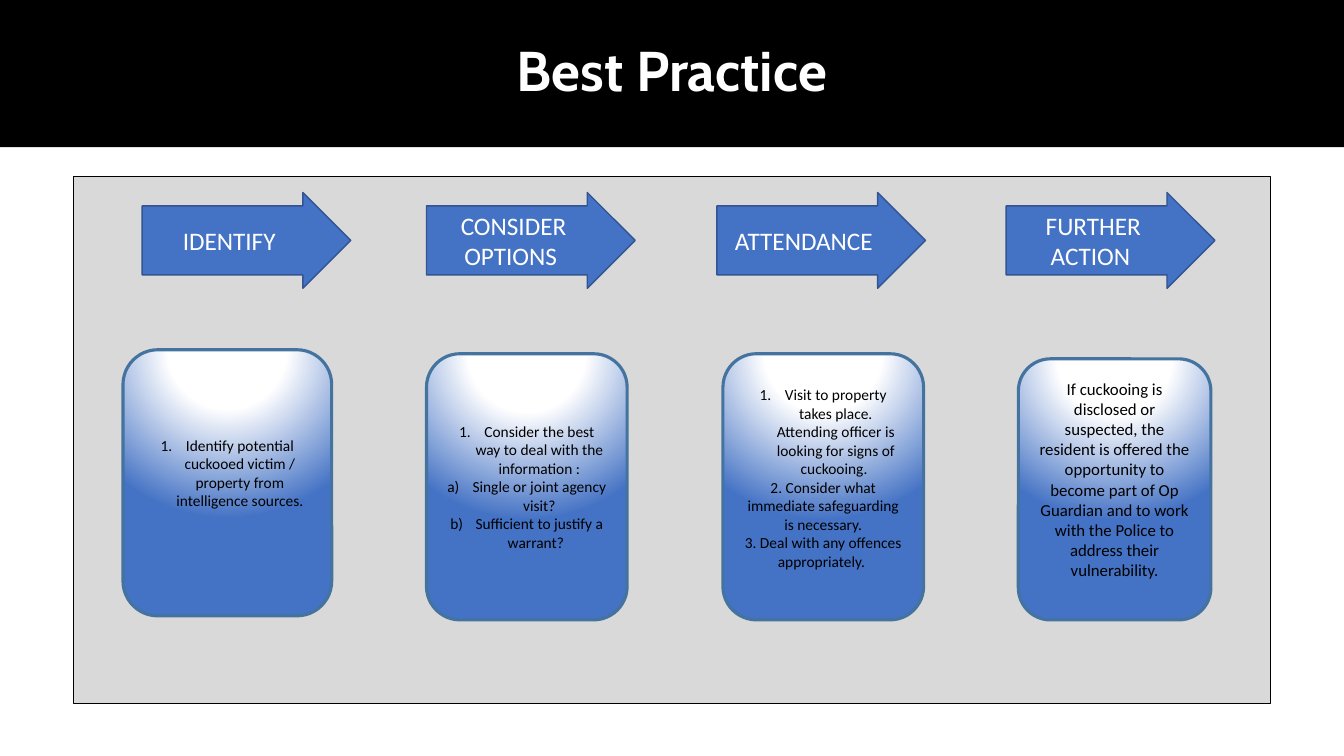
from pptx import Presentation
from pptx import util as u
from pptx.dml.color import RGBColor
from pptx.enum import shapes, text
from pptx.oxml import parse_xml
from pptx.oxml.ns import nsdecls, qn
from lxml import etree

COLOURS = {
    "black": "000000",
    "white": "FFFFFF",
    "panel": "D9D9D9",
    "blue": "4472C4",
    "arrow_line": "325491",
    "card_line": "43739E",
}
ARROW_WIDTH, ARROW_HEIGHT = 2.07, 0.95
LIST_INDENT = 0.25
STEPS = [
    {
        "heading": "IDENTIFY", "arrow_left": 1.41,
        "card": (1.22, 3.47, 2.07, 2.64), "size": 11, "bottom": 0.25,
        "items": [("arabicPeriod", "Identify potential cuckooed victim / property from intelligence sources.")],
    },
    {
        "heading": "CONSIDER OPTIONS ", "arrow_left": 4.23,
        "card": (4.23, 3.51, 1.99, 2.64), "size": 11, "bottom": 0.05,
        "items": [
            ("arabicPeriod", "Consider the best way to deal with the information :"),
            ("alphaLcParenR", "Single or joint agency visit?"),
            ("alphaLcParenR", "Sufficient to justify a warrant?  "),
        ],
    },
    {
        "heading": "ATTENDANCE", "arrow_left": 7.11,
        "card": (7.17, 3.51, 1.99, 2.64), "size": 11, "bottom": 0.23,
        "items": [
            ("arabicPeriod", "Visit to property takes place. Attending officer is looking for signs of cuckooing. "),
            (None, "2. Consider what immediate safeguarding is necessary."),
            (None, "3. Deal with any offences appropriately. "),
        ],
    },
    {
        "heading": "FURTHER ACTION ", "arrow_left": 9.98,
        "card": (10.1, 3.56, 1.91, 2.59), "size": 12, "bottom": 0.25,
        "items": [(None, "If cuckooing is disclosed or suspected, the resident is offered the opportunity "
                         "to become part of Op Guardian and to work with the Police to address their vulnerability.")],
    },
]


class SlideBuilder:
    title_font = {"name": "Cabin", "size": u.Pt(40), "bold": True}
    body_font = {"name": "Calibri", "bold": False}

    def __init__(self, slide):
        self.slide = slide

    def colour(self, name):
        return RGBColor.from_string(COLOURS[name])

    def apply(self, target, values):
        for name, value in values.items():
            setattr(target, name, value)

    def paint(self, shape, fill):
        shape.fill.solid()
        shape.fill.fore_color.rgb = self.colour(fill)

    def add_text(self, paragraph, content, font, colour):
        paragraph.alignment = text.PP_ALIGN.CENTER
        run = paragraph.add_run()
        run.text = content
        self.apply(run.font, font)
        run.font.color.rgb = self.colour(colour)

    def title(self, content, box):
        shape = self.slide.shapes.title
        self.apply(shape, dict(zip(("left", "top", "width", "height"), map(u.Inches, box))))
        self.paint(shape, "black")
        frame = shape.text_frame
        self.apply(frame, {
            "margin_left": 0, "margin_top": 0, "margin_right": 0, "margin_bottom": 0,
            "vertical_anchor": text.MSO_ANCHOR.MIDDLE, "word_wrap": True,
            "auto_size": text.MSO_AUTO_SIZE.NONE,
        })
        paragraph = frame.paragraphs[0]
        paragraph.line_spacing = 0.9
        self.add_text(paragraph, content, self.title_font, "white")

    def shape(self, kind, box, fill, line, line_width):
        shape = self.slide.shapes.add_shape(kind, *map(u.Inches, box))
        shape.shadow.inherit = False
        self.paint(shape, fill)
        shape.line.color.rgb = self.colour(line)
        shape.line.width = u.Pt(line_width)
        self.apply(shape.text_frame, {"word_wrap": True, "vertical_anchor": text.MSO_ANCHOR.MIDDLE})
        return shape

    def panel(self, box):
        self.shape(shapes.MSO_SHAPE.RECTANGLE, box, "panel", "black", 0.75)

    def arrow(self, content, left):
        box = (left, 1.91, ARROW_WIDTH, ARROW_HEIGHT)
        shape = self.shape(shapes.MSO_SHAPE.RIGHT_ARROW, box, "blue", "arrow_line", 1)
        shape.adjustments[0] = 0.72
        shape.adjustments[1] = 0.5
        font = {**self.body_font, "size": u.Pt(18)}
        self.add_text(shape.text_frame.paragraphs[0], content, font, "white")

    def glow(self, shape):
        stops = "".join(
            f'<a:gs pos="{position * 1000}"><a:srgbClr val="{COLOURS[name]}"/></a:gs>'
            for position, name in ((0, "white"), (35, "white"), (100, "blue"))
        )
        gradient = parse_xml(
            f'<a:gradFill {nsdecls("a")} rotWithShape="1"><a:gsLst>{stops}</a:gsLst>'
            '<a:path path="circle"><a:fillToRect l="50000" t="-80000" r="50000" b="180000"/>'
            '</a:path></a:gradFill>'
        )
        properties = shape.element.spPr
        properties.replace(properties.find(qn("a:solidFill")), gradient)

    def number(self, paragraph, scheme):
        properties = paragraph._p.get_or_add_pPr()
        properties.set("marL", str(u.Inches(LIST_INDENT)))
        properties.set("indent", str(-u.Inches(LIST_INDENT)))
        etree.SubElement(properties, qn("a:buAutoNum")).set("type", scheme)

    def card(self, items, box, size, bottom):
        shape = self.shape(shapes.MSO_SHAPE.ROUNDED_RECTANGLE, box, "blue", "card_line", 2.25)
        self.glow(shape)
        frame = shape.text_frame
        frame.margin_bottom = u.Inches(bottom)
        font = {**self.body_font, "size": u.Pt(size)}
        for index, (scheme, content) in enumerate(items):
            paragraph = frame.add_paragraph() if index else frame.paragraphs[0]
            self.add_text(paragraph, content, font, "black")
            if scheme:
                self.number(paragraph, scheme)


def main():
    presentation = Presentation()
    presentation.slide_width = u.Inches(13.33)
    presentation.slide_height = u.Inches(7.5)
    builder = SlideBuilder(presentation.slides.add_slide(presentation.slide_layouts[5]))
    builder.title("Best Practice", (0, 0, 13.33, 1.46))
    builder.panel((0.73, 1.75, 11.87, 5.23))
    for step in STEPS:
        builder.arrow(step["heading"], step["arrow_left"])
    for step in STEPS:
        builder.card(step["items"], step["card"], step["size"], step["bottom"])
    presentation.save("out.pptx")


if __name__ == "__main__":
    main()
